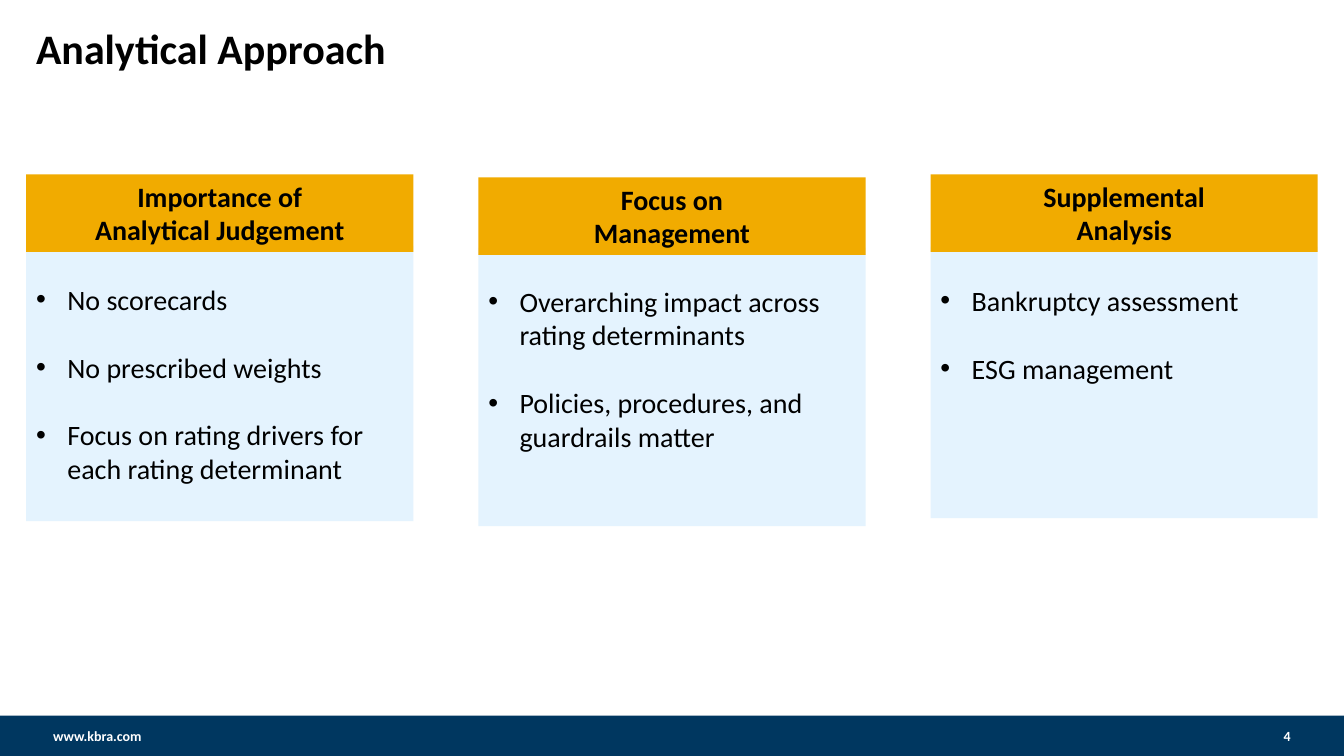
from dataclasses import dataclass

from lxml import etree
from pptx import Presentation
from pptx.dml.color import RGBColor
from pptx.enum import shapes, text
from pptx.oxml import ns
from pptx.util import Inches, Pt


@dataclass(frozen=True)
class Theme:
    font: str = "Calibri"
    ink: str = "000000"
    white: str = "FFFFFF"
    navy: str = "003760"
    amber: str = "F1AB00"
    pale_blue: str = "E4F3FE"
    title_size: float = 30
    body_size: float = 20
    footer_size: float = 10


THEME = Theme()
SLIDE_WIDTH, SLIDE_HEIGHT = 13.33, 7.5
PANEL_LEFT, PANEL_RIGHT, PANEL_WIDTH = 0.26, 13.07, 3.84
HEADER_HEIGHT = 0.77
BULLET_INDENT = 0.31

# Heading lines, bullets, header top, body top, body height
PANELS = [
    (["Importance of", "Analytical Judgement"],
     ["No scorecards", "No prescribed weights",
      "Focus on rating drivers for each rating determinant"],
     1.73, 2.44, 2.73),
    (["Focus on", "Management"],
     ["Overarching impact across rating determinants",
      "Policies, procedures, and guardrails matter"],
     1.76, 2.46, 2.76),
    (["Supplemental", "Analysis"],
     ["Bankruptcy assessment", "ESG management"],
     1.73, 2.45, 2.69),
]


def add_bullet(paragraph):
    properties = paragraph._p.get_or_add_pPr()
    indent = Inches(BULLET_INDENT)
    properties.set("marL", str(indent))
    properties.set("indent", str(-indent))
    bullet_font = etree.SubElement(properties, ns.qn("a:buFont"))
    bullet_font.set("typeface", "Arial")
    etree.SubElement(properties, ns.qn("a:buChar")).set("char", "•")


def write_text(shape, lines, size=THEME.body_size, color=THEME.ink, bold=False,
               align=text.PP_ALIGN.LEFT, anchor=text.MSO_ANCHOR.TOP,
               bullets=False, gap=0, line_spacing=None, margin_top=0.05):
    frame = shape.text_frame
    frame.word_wrap = True
    frame.vertical_anchor = anchor
    frame.margin_top = Inches(margin_top)
    for index, line in enumerate(lines):
        paragraph = frame.paragraphs[0] if index == 0 else frame.add_paragraph()
        if bullets:
            add_bullet(paragraph)
        paragraph.alignment = align
        if line_spacing:
            paragraph.line_spacing = line_spacing
        if index and gap:
            paragraph.space_before = Pt(gap)
        run = paragraph.add_run()
        run.text = line
        run.font.name = THEME.font
        run.font.size = Pt(size)
        run.font.bold = bold
        run.font.color.rgb = RGBColor.from_string(color)


def add_block(slide, box, color):
    """Add a plain filled rectangle."""
    shape = slide.shapes.add_shape(shapes.MSO_SHAPE.RECTANGLE, *map(Inches, box))
    shape.shadow.inherit = False
    shape.fill.solid()
    shape.fill.fore_color.rgb = RGBColor.from_string(color)
    shape.line.fill.background()
    return shape


def add_label(slide, box, label, **text_format):
    write_text(slide.shapes.add_textbox(*map(Inches, box)), [label], **text_format)


def add_footer(slide, box):
    left, top, width, height = box
    add_block(slide, box, THEME.navy)
    margin, label_width = 0.43, 3.56
    labels = [
        (left + margin, "www.kbra.com", text.PP_ALIGN.LEFT),
        (left + width - margin - label_width, "4", text.PP_ALIGN.RIGHT),
    ]
    for label_left, label, align in labels:
        add_label(slide, (label_left, top, label_width, height), label,
                  size=THEME.footer_size, color=THEME.white, bold=True,
                  align=align, anchor=text.MSO_ANCHOR.MIDDLE)


def add_panel(slide, box, body_top, heading, points):
    """Add a bulleted body with its heading bar overlapping the top edge."""
    left, top, width, height = box
    body_box = (left, body_top, width, top + height - body_top)
    write_text(add_block(slide, body_box, THEME.pale_blue), points,
               bullets=True, gap=24.4, margin_top=0.36)
    header = add_block(slide, (left, top, width, HEADER_HEIGHT), THEME.amber)
    write_text(header, heading, bold=True, align=text.PP_ALIGN.CENTER)


def add_panels(slide):
    pitch = (PANEL_RIGHT - PANEL_LEFT - PANEL_WIDTH) / (len(PANELS) - 1)
    for index, (heading, points, top, body_top, body_height) in enumerate(PANELS):
        box = (PANEL_LEFT + index * pitch, top, PANEL_WIDTH,
               body_top + body_height - top)
        add_panel(slide, box, body_top, heading, points)


def main():
    presentation = Presentation()
    presentation.slide_width = Inches(SLIDE_WIDTH)
    presentation.slide_height = Inches(SLIDE_HEIGHT)
    slide = presentation.slides.add_slide(presentation.slide_layouts[6])
    add_footer(slide, (0, 7.1, SLIDE_WIDTH, 0.4))
    add_label(slide, (0.26, 0.23, 12.83, 1.16), "Analytical Approach",
              size=THEME.title_size, bold=True, line_spacing=0.9)
    add_panels(slide)
    presentation.save("out.pptx")


if __name__ == "__main__":
    main()
